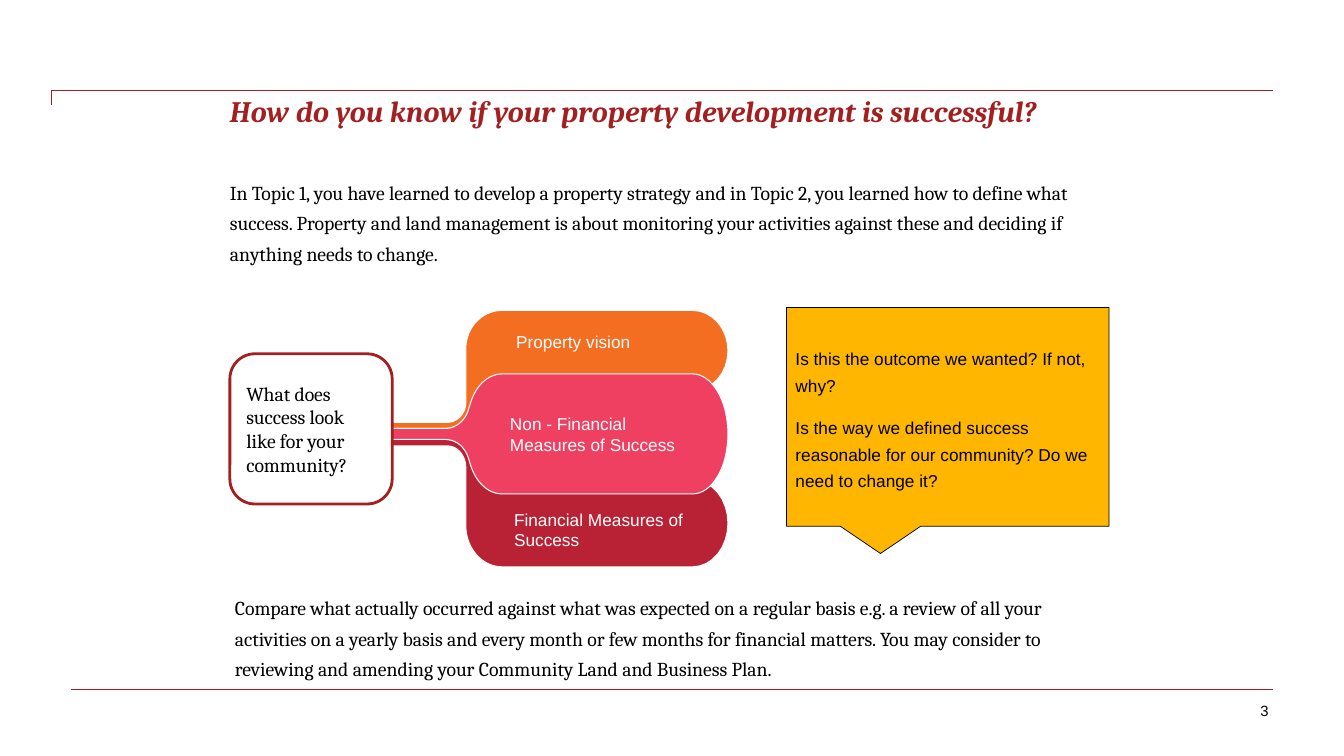
import math

from lxml import etree
from pptx import Presentation
from pptx.dml.color import RGBColor
from pptx.enum.shapes import MSO_CONNECTOR, MSO_SHAPE
from pptx.enum.text import MSO_ANCHOR, MSO_AUTO_SIZE, PP_ALIGN
from pptx.oxml.ns import qn
from pptx.util import Pt

PX = 9144  # 100 px to the inch
ELBOW, STRAIGHT = MSO_CONNECTOR.ELBOW, MSO_CONNECTOR.STRAIGHT
ROUNDED, CALLOUT = MSO_SHAPE.ROUNDED_RECTANGLE, MSO_SHAPE.RECTANGULAR_CALLOUT
TOP, MIDDLE = MSO_ANCHOR.TOP, MSO_ANCHOR.MIDDLE
LEFT, RIGHT = PP_ALIGN.LEFT, PP_ALIGN.RIGHT
NO_AUTOFIT = MSO_AUTO_SIZE.NONE

WHITE = RGBColor(0xFF, 0xFF, 0xFF)
BLACK = RGBColor(0x00, 0x00, 0x00)
DARK_RED = RGBColor(0xA3, 0x20, 0x20)
ORANGE = RGBColor(0xF3, 0x6E, 0x21)
CRIMSON = RGBColor(0xB8, 0x22, 0x34)
PINK = RGBColor(0xEF, 0x40, 0x62)
AMBER = RGBColor(0xFF, 0xB6, 0x00)

HEADING = {"name": "Cambria", "size": Pt(21.2), "bold": True, "italic": True}
SERIF = {"name": "Cambria", "size": Pt(14.1)}
SANS = {"name": "Arial", "size": Pt(12.3)}
SMALL = {"name": "Arial", "size": Pt(10.6)}
TIGHT = {"space_before": Pt(5.3)}
AIRY = {"space_before": Pt(5.3), "space_after": Pt(5.3), "line_spacing": 1.3}


def write(shape, texts, font, color, spacing, anchor=TOP, align=LEFT, inset=(10, 5)):
    frame = shape.text_frame
    frame.word_wrap = True
    frame.auto_size = NO_AUTOFIT
    frame.vertical_anchor = anchor
    frame.margin_left = frame.margin_right = inset[0] * PX
    frame.margin_top = frame.margin_bottom = inset[1] * PX
    for i, text in enumerate(texts):
        paragraph = frame.add_paragraph() if i else frame.paragraphs[0]
        paragraph.alignment = align
        for key, value in spacing.items():
            setattr(paragraph, key, value)
        run = paragraph.add_run()
        run.text = text
        run.font.color.rgb = color
        for key, value in font.items():
            setattr(run.font, key, value)


def arc(cx, cy, rx, ry, start, end):
    angles = [math.radians(start + (end - start) * i / 16) for i in range(17)]
    return [(cx + rx * math.cos(a), cy + ry * math.sin(a)) for a in angles]


prs = Presentation()
prs.slide_width, prs.slide_height = 1333 * PX, 750 * PX
slide = prs.slides.add_slide(prs.slide_layouts[3])
shapes = slide.shapes

# Frame lines
for kind, x1, y1, x2, y2 in [(ELBOW, 51, 104, 1263, 90), (STRAIGHT, 70, 684, 1263, 684)]:
    rule = shapes.add_connector(kind, x1 * PX, y1 * PX, x2 * PX, y2 * PX)
    rule.line.color.rgb = DARK_RED
    rule.line.width = Pt(0.75)
    properties = rule._element.spPr
    etree.SubElement(properties, qn("a:effectLst"))
    if kind == ELBOW:
        geometry = properties.find(qn("a:prstGeom"))
        adjustments = geometry.find(qn("a:avLst"))
        if adjustments is None:
            adjustments = etree.SubElement(geometry, qn("a:avLst"))
        etree.SubElement(adjustments, qn("a:gd"), name="adj1", fmla="val 0")

# Title and the two paragraphs
title, intro, advice = slide.placeholders
for holder, box, text, font, color, spacing in [
    (title, (228, 92, 857, 97),
     "How do you know if your property development is successful?",
     HEADING, DARK_RED, {}),
    (intro, (228, 172, 841, 113),
     "In Topic 1, you have learned to develop a property strategy and in Topic 2, "
     "you learned how to define what success. Property and land management is about "
     "monitoring your activities against these and deciding if anything needs to change.",
     SERIF, BLACK, AIRY),
    (advice, (233, 584, 841, 113),
     "Compare what actually occurred against what was expected on a regular basis "
     "e.g. a review of all your activities on a yearly basis and every month or few "
     "months for financial matters. You may consider to reviewing and amending your "
     "Community Land and Business Plan.",
     SERIF, BLACK, AIRY),
]:
    holder.left, holder.top, holder.width, holder.height = [v * PX for v in box]
    write(holder, [text], font, color, spacing, inset=(0, 0))
    if holder is not title:
        format_xml = holder.text_frame.paragraphs[0]._p.get_or_add_pPr()
        format_xml.set("marL", "0")
        format_xml.set("indent", "0")
        etree.SubElement(format_xml, qn("a:buNone"))

# Ribbons: the lower one mirrors the upper, the middle one mirrors its own top half
vision = [(330, 425), *arc(442, 401, 24, 24, 90, 30), *arc(498, 420, 34, 32, 200, 270),
          *arc(687, 348, 35, 40, 90, -90), *arc(498, 346, 36, 38, 270, 180),
          *arc(444, 399, 18, 20, 0, 90), (330, 419)]
financial = [(x, 436 + (425 - y) * 1.08) for x, y in vision]
upper_half = [(330, 425), *arc(442, 397, 24, 28, 90, 20), *arc(498, 418, 34, 47, 200, 270),
              *arc(687, 430.5, 35, 59.5, -90, 0)]
non_financial = upper_half + [(x, 861 - y) for x, y in reversed(upper_half)]

for outline, color in [(vision, ORANGE), (financial, CRIMSON), (non_financial, PINK)]:
    points = [(x * PX, y * PX) for x, y in outline]
    builder = shapes.build_freeform(*points[0])
    builder.add_line_segments(points[1:], close=True)
    ribbon = builder.convert_to_shape()
    ribbon.shadow.inherit = False
    ribbon.fill.solid()
    ribbon.fill.fore_color.rgb = color
    ribbon.line.color.rgb = WHITE
    ribbon.line.width = Pt(0.75)

# Ribbon labels and page number
for box, text, font, color, spacing, anchor, align in [
    ((502, 324, 195, 31), "Property vision", SANS, WHITE, TIGHT, TOP, LEFT),
    ((496, 405, 206, 52), "Non - Financial Measures of Success", SANS, WHITE, TIGHT, TOP, LEFT),
    ((500, 500, 197, 52), "Financial Measures of Success", SANS, WHITE, TIGHT, TOP, LEFT),
    ((904, 687, 364, 35), "3", SMALL, BLACK, {}, MIDDLE, RIGHT),
]:
    label = shapes.add_textbox(*[v * PX for v in box])
    write(label, [text], font, color, spacing, anchor, align)

# Question box and callout
for kind, box, fill, line, width, texts, font, spacing in [
    (ROUNDED, (228, 351, 161, 149), WHITE, DARK_RED, 2,
     ["What does success look like for your community?"], SERIF, TIGHT),
    (CALLOUT, (780, 305, 320, 217), AMBER, BLACK, 0.5,
     ["Is this the outcome we wanted? If not, why?",
      "Is the way we defined success reasonable for our community? "
      "Do we need to change it?"], SANS, AIRY),
]:
    panel = shapes.add_shape(kind, *[v * PX for v in box])
    panel.shadow.inherit = False
    panel.fill.solid()
    panel.fill.fore_color.rgb = fill
    panel.line.color.rgb = line
    panel.line.width = Pt(width)
    write(panel, texts, font, BLACK, spacing, MIDDLE, inset=(9, 4))

prs.save("out.pptx")
